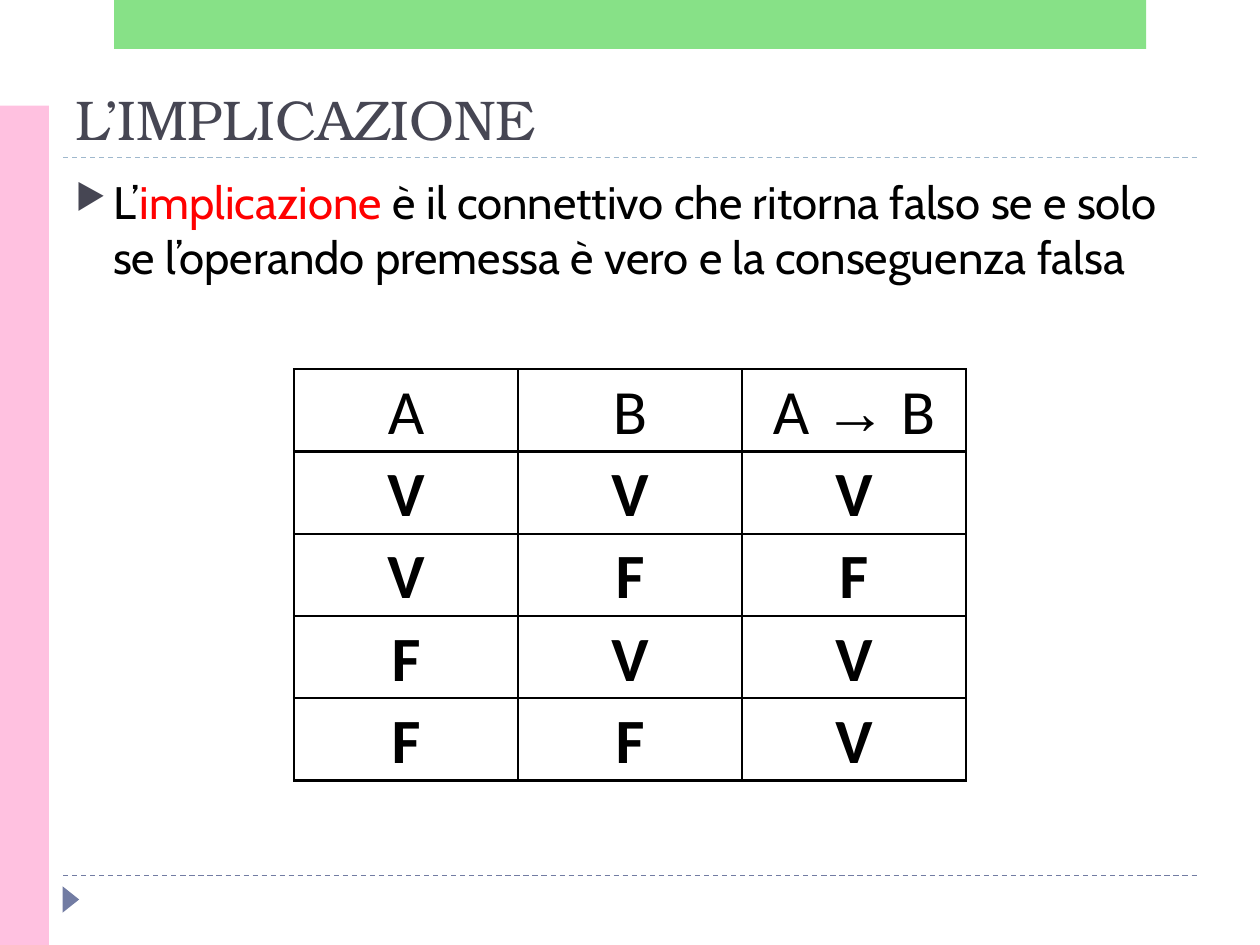
import pptx
import pptx.dml.color
import pptx.enum.dml
import pptx.enum.shapes
import pptx.enum.text
import pptx.oxml
import pptx.oxml.ns
import pptx.util

Pt = pptx.util.Pt
RGBColor = pptx.dml.color.RGBColor
SHAPE = pptx.enum.shapes.MSO_SHAPE
ANCHOR = pptx.enum.text.MSO_ANCHOR
A_NS = pptx.oxml.ns.nsdecls("a")

BLACK = RGBColor(0x00, 0x00, 0x00)
RED = RGBColor(0xFF, 0x00, 0x00)
SLATE = RGBColor(0x46, 0x46, 0x53)
INDIGO = RGBColor(0x72, 0x7C, 0xA3)
PALE_BLUE = RGBColor(0x9F, 0xB8, 0xCD)
PINK = RGBColor(0xFF, 0xC1, 0xE0)
GREEN = RGBColor(0x62, 0xD8, 0x62)

TRUTH_TABLE = [
    ["A", "B", "A → B"],
    ["V", "V", "V"],
    ["V", "F", "F"],
    ["F", "V", "V"],
    ["F", "F", "V"],
]


def xml(text):
    return pptx.oxml.parse_xml(text)


def add_rule(slide, y, color):
    line = slide.shapes.add_connector(
        pptx.enum.shapes.MSO_CONNECTOR.STRAIGHT, Pt(36), Pt(y), Pt(684), Pt(y))
    line.line.color.rgb = color
    line.line.width = Pt(0.75)
    line.line.dash_style = pptx.enum.dml.MSO_LINE.DASH
    line._element.spPr.append(xml(f"<a:effectLst {A_NS}/>"))


def add_block(slide, kind, left, top, width, height, color, alpha=None):
    sp = slide.shapes.add_shape(kind, Pt(left), Pt(top), Pt(width), Pt(height))
    sp.shadow.inherit = False
    sp.fill.solid()
    sp.fill.fore_color.rgb = color
    sp.line.fill.background()
    if alpha is not None:
        fill = sp._element.spPr.find(pptx.oxml.ns.qn("a:solidFill"))
        fill[0].append(xml(f'<a:alpha {A_NS} val="{alpha * 1000}"/>'))
    return sp


def add_textbox(slide, left, top, width, height, anchor):
    tf = slide.shapes.add_textbox(Pt(left), Pt(top), Pt(width), Pt(height)).text_frame
    tf.word_wrap = True
    tf.vertical_anchor = anchor
    return tf.paragraphs[0]


def add_run(p, text, font, size, color, bold=False):
    r = p.add_run()
    r.text = text
    r.font.name = font
    r.font.size = Pt(size)
    r.font.color.rgb = color
    r.font.bold = bold


def set_bullet(p, char, color, percent, indent):
    pPr = p._p.get_or_add_pPr()
    pPr.set("marL", str(Pt(indent)))
    pPr.set("indent", str(-Pt(indent)))
    for tag in (
        f'<a:buClr {A_NS}><a:srgbClr val="{color}"/></a:buClr>',
        f'<a:buSzPct {A_NS} val="{percent * 1000}"/>',
        f'<a:buChar {A_NS} char="{char}"/>',
    ):
        pPr.append(xml(tag))


def set_borders(cell, color, width):
    tcPr = cell._tc.get_or_add_tcPr()
    for i, side in enumerate(("lnL", "lnR", "lnT", "lnB")):
        tcPr.insert(i, xml(
            f'<a:{side} {A_NS} w="{Pt(width)}"><a:solidFill>'
            f'<a:srgbClr val="{color}"/></a:solidFill></a:{side}>'))


def fill_cell(cell, text, bold):
    cell.fill.background()
    cell.vertical_anchor = ANCHOR.BOTTOM
    cell.margin_left = cell.margin_right = cell.margin_top = Pt(0.75)
    cell.margin_bottom = Pt(0)
    set_borders(cell, BLACK, 1.5)
    p = cell.text_frame.paragraphs[0]
    p.alignment = pptx.enum.text.PP_ALIGN.CENTER
    before, arrow, after = text.partition("→")
    for part, font in ((before, "Calibri"), (arrow, "Arial"), (after, "Calibri")):
        if part:
            add_run(p, part, font, 36, BLACK, bold)


def add_truth_table(slide, left, top, col_width, row_height):
    rows, cols = len(TRUTH_TABLE), len(TRUTH_TABLE[0])
    table = slide.shapes.add_table(
        rows, cols, Pt(left), Pt(top),
        Pt(cols * col_width), Pt(rows * row_height)).table
    table.first_row = table.horz_banding = False
    for i, values in enumerate(TRUTH_TABLE):
        for j, value in enumerate(values):
            fill_cell(table.cell(i, j), value, bold=i > 0)


def main():
    prs = pptx.Presentation()
    prs.slide_width, prs.slide_height = Pt(720), Pt(540)
    s = prs.slides.add_slide(prs.slide_layouts[6])

    add_rule(s, 500.4, INDIGO)
    add_rule(s, 90, PALE_BLUE)
    marker = add_block(s, SHAPE.ISOSCELES_TRIANGLE, 33, 509.3, 15, 9.4, INDIGO)
    marker.rotation = 90
    add_block(s, SHAPE.RECTANGLE, 0, 60.3, 28, 479.7, PINK)
    add_block(s, SHAPE.RECTANGLE, 65.2, 0, 589.8, 28, GREEN, alpha=76)

    title = add_textbox(s, 36, 39.6, 648, 50.4, ANCHOR.BOTTOM)
    add_run(title, "L’IMPLICAZIONE", "TeX Gyre Bonum", 32, SLATE)

    body = add_textbox(s, 36, 96, 648, 389, ANCHOR.TOP)
    set_bullet(body, "▶", SLATE, 76, 21.6)
    add_run(body, "L’", "Cabin", 26, BLACK)
    add_run(body, "implicazione ", "Cabin", 26, RED)
    add_run(body, "è il connettivo che ritorna falso se e solo se l’operando "
            "premessa è vero e la conseguenza falsa", "Cabin", 26, BLACK)

    add_truth_table(s, 168, 211, 128, 47)
    prs.save("out.pptx")


if __name__ == "__main__":
    main()
